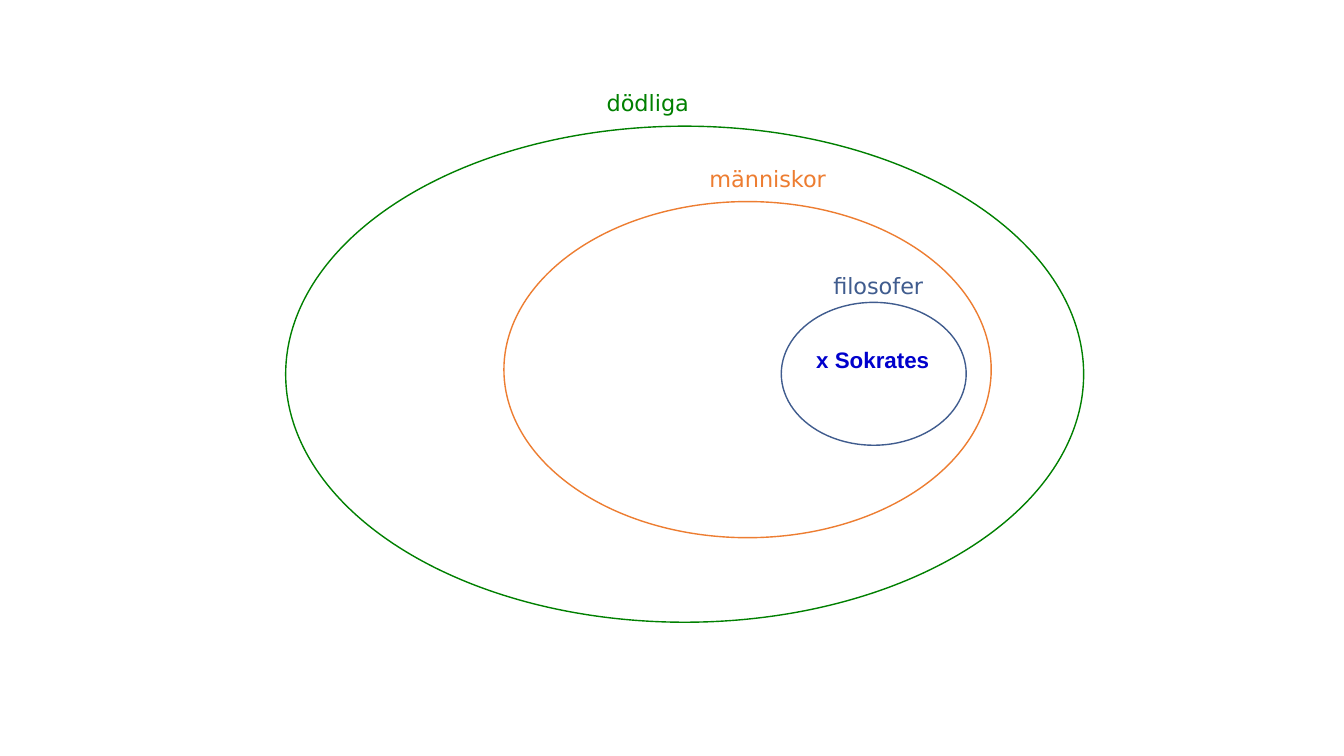
from pptx import Presentation
from pptx.dml.color import RGBColor
from pptx.enum.shapes import MSO_SHAPE
from pptx.enum.text import MSO_AUTO_SIZE, PP_ALIGN
from pptx.util import Cm, Pt

WHITE = RGBColor(0xFF, 0xFF, 0xFF)
GREEN = RGBColor(0x00, 0x80, 0x00)
ORANGE = RGBColor(0xED, 0x7D, 0x31)
SLATE = RGBColor(0x40, 0x5C, 0x8E)
BLUE = RGBColor(0x00, 0x00, 0xCC)

# Outermost set first: name, colour, ellipse box, label box (left, top, width, height in cm)
SETS = [
    ("dödliga", GREEN, (7.2, 3.18, 20.11, 12.5), (15.04, 2.13, 3.18, 0.91)),
    ("människor", ORANGE, (12.7, 5.08, 12.28, 8.47), (17.63, 4.04, 3.73, 0.91)),
    ("filosofer", SLATE, (19.69, 7.62, 4.66, 3.6), (20.75, 6.73, 3.18, 0.91)),
]
MEMBER = ("x Sokrates", BLUE, (20.32, 8.59, 3.35, 0.94))


def add_ellipse(slide, box, color):
    shape = slide.shapes.add_shape(MSO_SHAPE.OVAL, *map(Cm, box))
    shape.shadow.inherit = False
    shape.fill.solid()
    shape.fill.fore_color.rgb = WHITE
    shape.line.color.rgb = color
    shape.line.width = Pt(1)


def add_text(slide, text, box, color, font="DejaVu Sans", size=16, bold=False,
             align=PP_ALIGN.LEFT, wrap=True):
    frame = slide.shapes.add_textbox(*map(Cm, box)).text_frame
    frame.word_wrap = wrap
    frame.auto_size = MSO_AUTO_SIZE.SHAPE_TO_FIT_TEXT
    paragraph = frame.paragraphs[0]
    paragraph.alignment = align
    run = paragraph.add_run()
    run.text = text
    run.font.name = font
    run.font.size = Pt(size)
    run.font.bold = bold
    run.font.color.rgb = color


def main():
    presentation = Presentation()
    presentation.slide_width = Cm(33.87)
    presentation.slide_height = Cm(19.05)
    slide = presentation.slides.add_slide(presentation.slide_layouts[6])

    for _, color, ellipse_box, _ in SETS:
        add_ellipse(slide, ellipse_box, color)
    for name, color, _, label_box in SETS:
        add_text(slide, name, label_box, color)

    name, color, box = MEMBER
    add_text(slide, name, box, color, font="Arial", bold=True,
             align=PP_ALIGN.CENTER, wrap=False)

    presentation.save("out.pptx")


if __name__ == "__main__":
    main()
